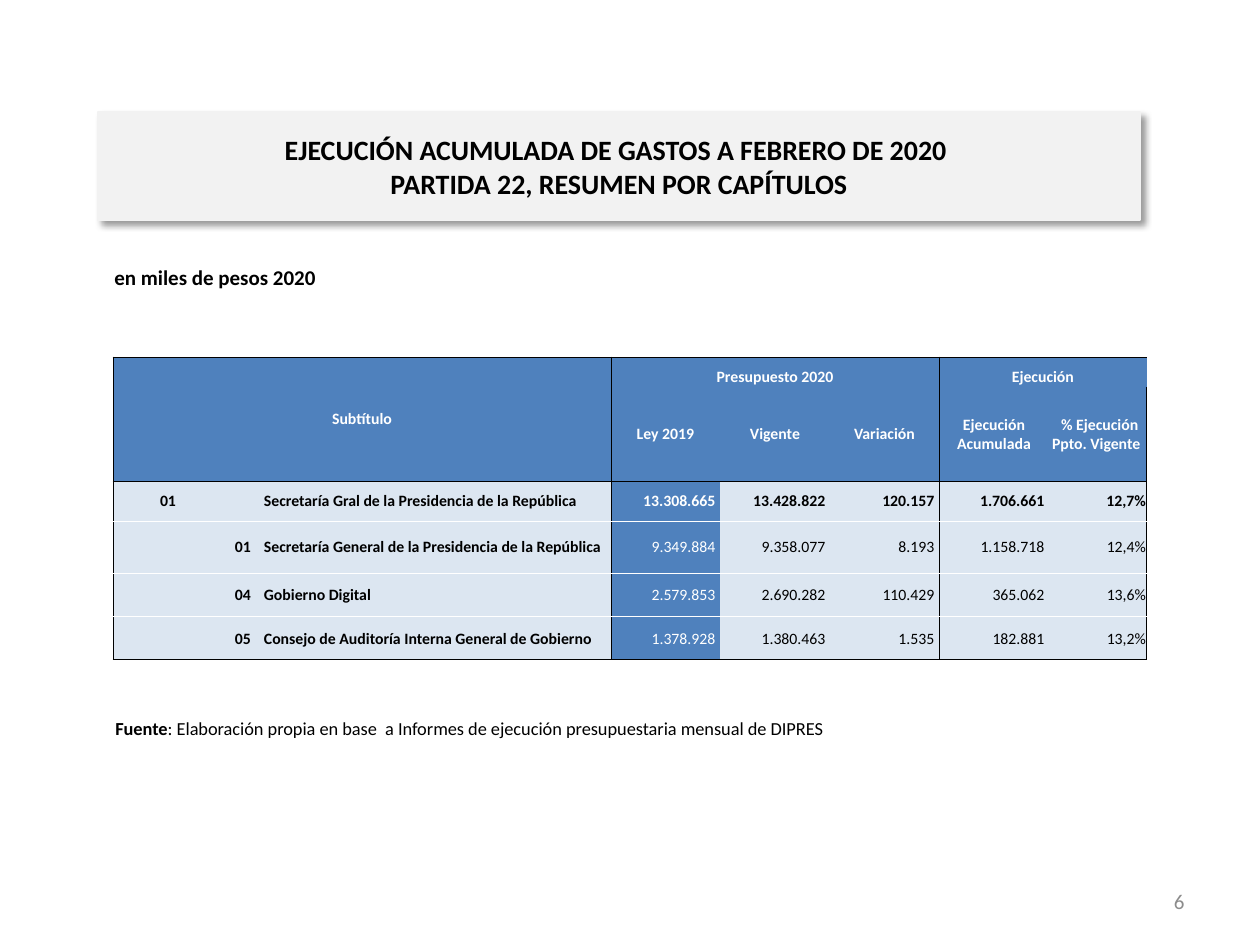
from typing import NamedTuple, Optional

from lxml.etree import SubElement
from pptx import Presentation
from pptx.dml.color import RGBColor
from pptx.enum.shapes import MSO_SHAPE
from pptx.enum.text import MSO_ANCHOR, PP_ALIGN
from pptx.oxml.ns import qn
from pptx.util import Emu, Pt

BLACK = RGBColor(0x00, 0x00, 0x00)
WHITE = RGBColor(0xFF, 0xFF, 0xFF)
BLUE = RGBColor(0x4F, 0x81, 0xBD)
PALE = RGBColor(0xDC, 0xE6, 0xF1)
GREY = RGBColor(0x8C, 0x8C, 0x8C)
LIGHT = RGBColor(0xF2, 0xF2, 0xF2)
FONT = "Calibri"

COLS = [110, 40, 348, 109, 110, 109, 110, 98]
ROWS = [30, 94, 40, 52, 44, 43]
HEAD = 2  # header rows
STARTS, ENDS = (0, 3, 6), (2, 5, 7)  # columns at group edges


class Line(NamedTuple):
    code: str
    name: str
    sums: tuple
    total: bool = False


class Label(NamedTuple):
    row: int
    col: int
    text: str
    high: int = 1
    wide: int = 1


LABELS = [
    Label(0, 0, "Subtítulo", 2, 3),
    Label(0, 3, "Presupuesto 2020", 1, 3),
    Label(0, 6, "Ejecución", 1, 2),
    Label(1, 3, "Ley 2019"),
    Label(1, 4, "Vigente"),
    Label(1, 5, "Variación"),
    Label(1, 6, "Ejecución Acumulada"),
    Label(1, 7, " % Ejecución Ppto. Vigente "),
]
LINES = [
    Line("01", "Secretaría Gral de la Presidencia de la República",
         ("13.308.665 ", "13.428.822 ", "120.157 ", "1.706.661 ", "12,7%"), True),
    Line("01", "Secretaría General de la Presidencia de la República",
         ("9.349.884 ", "9.358.077 ", "8.193 ", "1.158.718 ", "12,4%")),
    Line("04", "Gobierno Digital",
         ("2.579.853 ", "2.690.282 ", "110.429 ", "365.062 ", "13,6%")),
    Line("05", "Consejo de Auditoría Interna General de Gobierno",
         ("1.378.928 ", "1.380.463 ", "1.535 ", "182.881 ", "13,2%")),
]


def px(count: int) -> Emu:
    return Emu(round(count * 914400 / 126))


def put(frame, text: str, *, size: float = 9, color: RGBColor = BLACK,
        bold: bool = False, align=PP_ALIGN.LEFT) -> None:
    """Append text to the first paragraph, breaking at newlines."""
    para = frame.paragraphs[0]
    para.alignment = align
    for num, part in enumerate(text.split("\n")):
        if num:
            para.add_line_break()
        run = para.add_run()
        run.text = part
        run.font.name = FONT
        run.font.size = Pt(size)
        run.font.bold = bold
        run.font.color.rgb = color


def add_box(slide, left: int, top: int, width: int, height: int,
            anchor=MSO_ANCHOR.TOP):
    box = slide.shapes.add_textbox(px(left), px(top), px(width), px(height))
    frame = box.text_frame
    frame.word_wrap = True
    frame.vertical_anchor = anchor
    return frame


def add_title(slide) -> None:
    box = slide.shapes.add_shape(
        MSO_SHAPE.RECTANGLE, px(98), px(112), px(1042), px(108))
    box.fill.solid()
    box.fill.fore_color.rgb = LIGHT
    box.line.color.rgb = LIGHT
    box.line.width = Pt(0.75)
    box.shadow.inherit = False
    effects = box._element.spPr.find(qn("a:effectLst"))
    shade = SubElement(effects, qn("a:outerShdw"), blurRad=str(Pt(4)),
                       dist=str(Pt(3)), dir=str(45 * 60000), algn="tl")
    tint = SubElement(shade, qn("a:srgbClr"), val=str(BLACK))
    SubElement(tint, qn("a:alpha"), val="40000")
    box.text_frame.word_wrap = True
    box.text_frame.vertical_anchor = MSO_ANCHOR.MIDDLE
    put(box.text_frame,
        "EJECUCIÓN ACUMULADA DE GASTOS A FEBRERO DE 2020 \n"
        "PARTIDA 22, RESUMEN POR CAPÍTULOS",
        size=16, bold=True, align=PP_ALIGN.CENTER)


def edge(cell, side: str, color: Optional[RGBColor]) -> None:
    props = cell._tc.get_or_add_tcPr()
    line = SubElement(props, qn("a:ln" + side), w=str(Pt(0.5)))
    if color is None:
        SubElement(line, qn("a:noFill"))
    else:
        fill = SubElement(line, qn("a:solidFill"))
        SubElement(fill, qn("a:srgbClr"), val=str(color))


def style(cell, row: int, col: int) -> None:
    """Set borders, fill and margins from the place in the grid."""
    last = len(ROWS) - 1
    inner = None if row < HEAD else WHITE
    edge(cell, "L", BLACK if col in STARTS else None)
    edge(cell, "R", BLACK if col in ENDS else None)
    edge(cell, "T", BLACK if row in (0, HEAD) else inner)
    edge(cell, "B", BLACK if row in (HEAD - 1, last) else inner)
    cell.fill.solid()
    cell.fill.fore_color.rgb = BLUE if row < HEAD or col == 3 else PALE
    cell.margin_left = cell.margin_right = cell.margin_top = px(1)
    cell.margin_bottom = 0
    cell.vertical_anchor = MSO_ANCHOR.MIDDLE


def fill_row(table, row: int, line: Line) -> None:
    codes = (line.code, "") if line.total else ("", line.code)
    for col, text in enumerate((*codes, line.name, *line.sums)):
        align = (PP_ALIGN.CENTER if col < 2 else
                 PP_ALIGN.JUSTIFY if col == 2 else PP_ALIGN.RIGHT)
        put(table.cell(row, col).text_frame, text, align=align,
            bold=line.total or col < 3, color=WHITE if col == 3 else BLACK)


def add_grid(slide) -> None:
    table = slide.shapes.add_table(
        len(ROWS), len(COLS), px(113), px(357),
        px(sum(COLS)), px(sum(ROWS))).table
    table.horz_banding = False
    table.first_row = False
    for col, width in zip(table.columns, COLS):
        col.width = px(width)
    for row, height in zip(table.rows, ROWS):
        row.height = px(height)
    for row in range(len(ROWS)):
        for col in range(len(COLS)):
            style(table.cell(row, col), row, col)
    for item in LABELS:
        cell = table.cell(item.row, item.col)
        if item.high * item.wide > 1:
            cell.merge(table.cell(item.row + item.high - 1,
                                  item.col + item.wide - 1))
        if item.row == 0 and item.high == 1:
            cell.vertical_anchor = MSO_ANCHOR.BOTTOM
        put(cell.text_frame, item.text, color=WHITE, bold=True,
            align=PP_ALIGN.CENTER)
    for row, line in enumerate(LINES, HEAD):
        fill_row(table, row, line)


def main() -> None:
    deck = Presentation()
    deck.slide_width, deck.slide_height = px(1260), px(945)
    slide = deck.slides.add_slide(deck.slide_layouts[6])
    add_title(slide)
    put(add_box(slide, 903, 876, 294, 50, MSO_ANCHOR.MIDDLE), "6",
        size=12, color=GREY, align=PP_ALIGN.RIGHT)
    source = add_box(slide, 103, 711, 973, 50)
    put(source, "Fuente", size=10.5, bold=True)
    put(source, ": Elaboración propia en base  a Informes de ejecución "
        "presupuestaria mensual de DIPRES", size=10.5)
    put(add_box(slide, 102, 258, 1032, 45), "en miles de pesos 2020",
        size=12, bold=True)
    add_grid(slide)
    deck.save("out.pptx")


if __name__ == "__main__":
    main()
